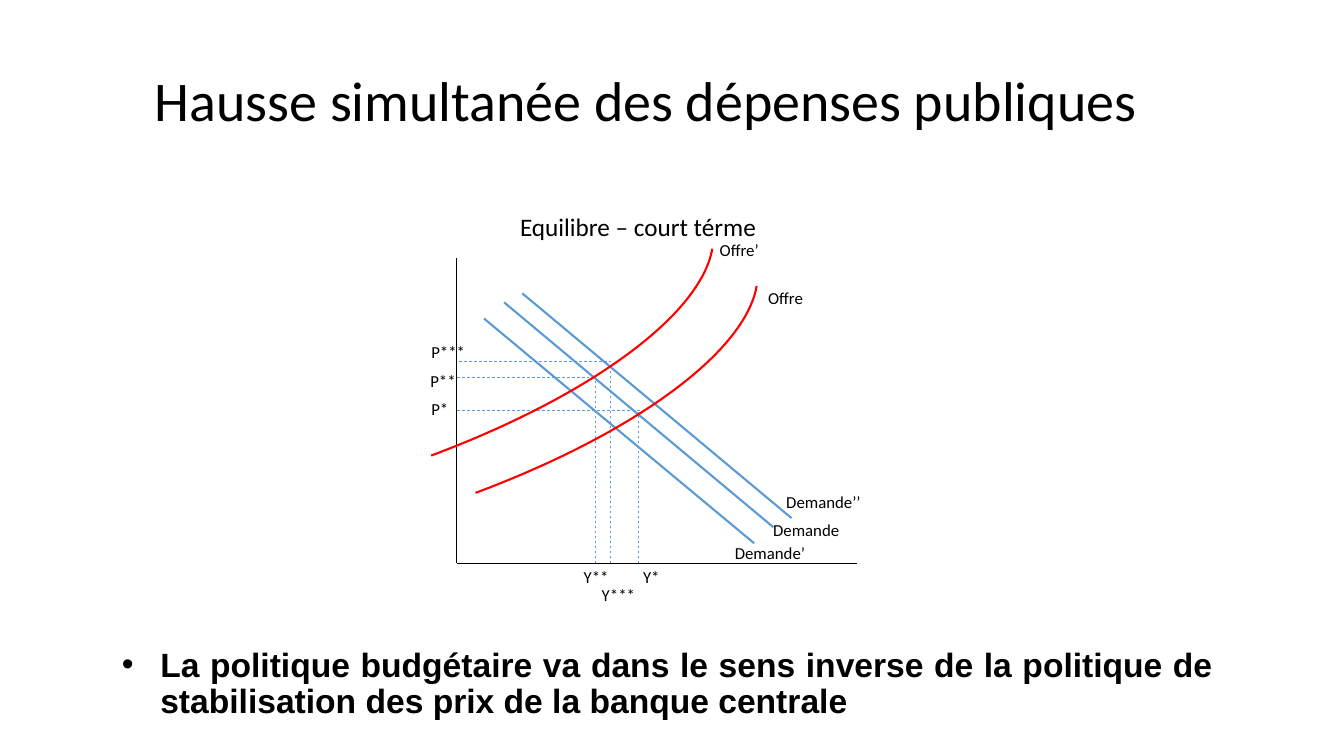
"""Build a slide on short-run equilibrium under rising public spending."""
import pptx
import pptx.dml.color
import pptx.enum.dml
import pptx.enum.shapes
import pptx.enum.text
import pptx.oxml
import pptx.util
from pptx.util import Inches

COLORS = {"ink": "000000", "demand": "5B9BD5", "supply": "FF0000"}


def rgb(name):
    return pptx.dml.color.RGBColor.from_string(COLORS[name])


def style_text(paragraph, size, font="Calibri", bold=False):
    paragraph.font.name = font
    paragraph.font.size = pptx.util.Pt(size)
    paragraph.font.bold = bold
    paragraph.font.color.rgb = rgb("ink")


deck = pptx.Presentation()
deck.slide_width = Inches(13.33)
deck.slide_height = Inches(7.5)
page = deck.slides.add_slide(deck.slide_layouts[1])

title = page.shapes.title
body = page.placeholders[1]
for box, (left, top, width, height) in [
    (title, (0.47, 0.25, 11.87, 1.13)),
    (body, (1.11, 6.38, 11.02, 1.1)),
]:
    box.left, box.top = Inches(left), Inches(top)
    box.width, box.height = Inches(width), Inches(height)
    box.text_frame.auto_size = pptx.enum.text.MSO_AUTO_SIZE.NONE
    box.text_frame.word_wrap = True

title.text_frame.text = "Hausse simultanée des dépenses publiques"
title.text_frame.vertical_anchor = pptx.enum.text.MSO_ANCHOR.BOTTOM
heading = title.text_frame.paragraphs[0]
heading.alignment = pptx.enum.text.PP_ALIGN.CENTER
heading.line_spacing = 0.9
style_text(heading, 40)

body.text_frame.text = (
    "La politique budgétaire va dans le sens inverse de la politique de "
    "stabilisation des prix de la banque centrale"
)
para = body.text_frame.paragraphs[0]
para.alignment = pptx.enum.text.PP_ALIGN.JUSTIFY
para.line_spacing = 0.9
para.space_before = pptx.util.Pt(0)
style_text(para, 24, "Arial", True)
indent = Inches(0.38)
properties = para._p.get_or_add_pPr()
properties.set("marL", str(indent))
properties.set("indent", str(-indent))

axis_x, axis_y = 4.53, 5.59
axes = [(axis_x, 2.56, axis_x, axis_y), (8.5, axis_y, axis_x, axis_y)]
demand_curves = [
    (5, 3, 7.67, 5.23),
    (4.8, 3.16, 7.48, 5.39),
    (5.18, 2.91, 7.85, 5.14),
]
guides = [
    (axis_x, 4.07, 6.35, 4.07),
    (6.33, axis_y, 6.33, 4.09),
    (axis_x, 3.74, 5.84, 3.74),
    (5.9, axis_y, 5.9, 3.74),
    (4.55, 3.59, 6.06, 3.59),
    (6.05, axis_y, 6.05, 3.63),
]
for segments, color, weight, dashed in [
    (axes, "ink", 0.5, False),
    (demand_curves, "demand", 1.5, False),
    (guides, "demand", 0.5, True),
]:
    for segment in segments:
        line = page.shapes.add_connector(
            pptx.enum.shapes.MSO_CONNECTOR.STRAIGHT, *map(Inches, segment)
        )
        line.line.color.rgb = rgb(color)
        line.line.width = pptx.util.Pt(weight)
        if dashed:
            line.line.dash_style = pptx.enum.dml.MSO_LINE.DASH
        line._element.spPr.append(pptx.oxml.parse_xml(
            '<a:effectLst xmlns:a='
            '"http://schemas.openxmlformats.org/drawingml/2006/main"/>'
        ))

for left, top in [(1.89, -0.52), (1.45, -0.89)]:
    supply = page.shapes.add_shape(
        pptx.enum.shapes.MSO_SHAPE.ARC,
        Inches(left), Inches(top), Inches(3.01), Inches(8.52),
    )
    supply.rotation = 74.2
    supply.adjustments[0] = 164.05
    supply.adjustments[1] = 196.09
    supply.shadow.inherit = False
    supply.fill.background()
    supply.line.color.rgb = rgb("supply")
    supply.line.width = pptx.util.Pt(1.5)

for text, left, top, width, size in [
    ("Equilibre – court térme", 5.06, 2.05, 3.13, 18),
    ("Offre’", 7.04, 2.33, 1.34, 12),
    ("Offre", 7.52, 2.81, 1.34, 12),
    ("Demande’’", 7.7, 4.83, 1.34, 12),
    ("Demande", 7.57, 5.11, 1.34, 12),
    ("Demande’", 7.19, 5.34, 1.34, 12),
    ("P***", 4.18, 3.34, 0.66, 12),
    ("P**", 4.17, 3.63, 0.66, 12),
    ("P*", 4.18, 3.91, 0.66, 12),
    ("Y**", 5.69, 5.57, 0.66, 12),
    ("Y*", 6.28, 5.57, 0.66, 12),
    ("Y***", 5.87, 5.75, 0.66, 12),
]:
    label = page.shapes.add_textbox(
        Inches(left), Inches(top), Inches(width), Inches(size / 60 + 0.1)
    )
    label.text_frame.word_wrap = True
    label.text_frame.text = text
    style_text(label.text_frame.paragraphs[0], size)

deck.save("out.pptx")
